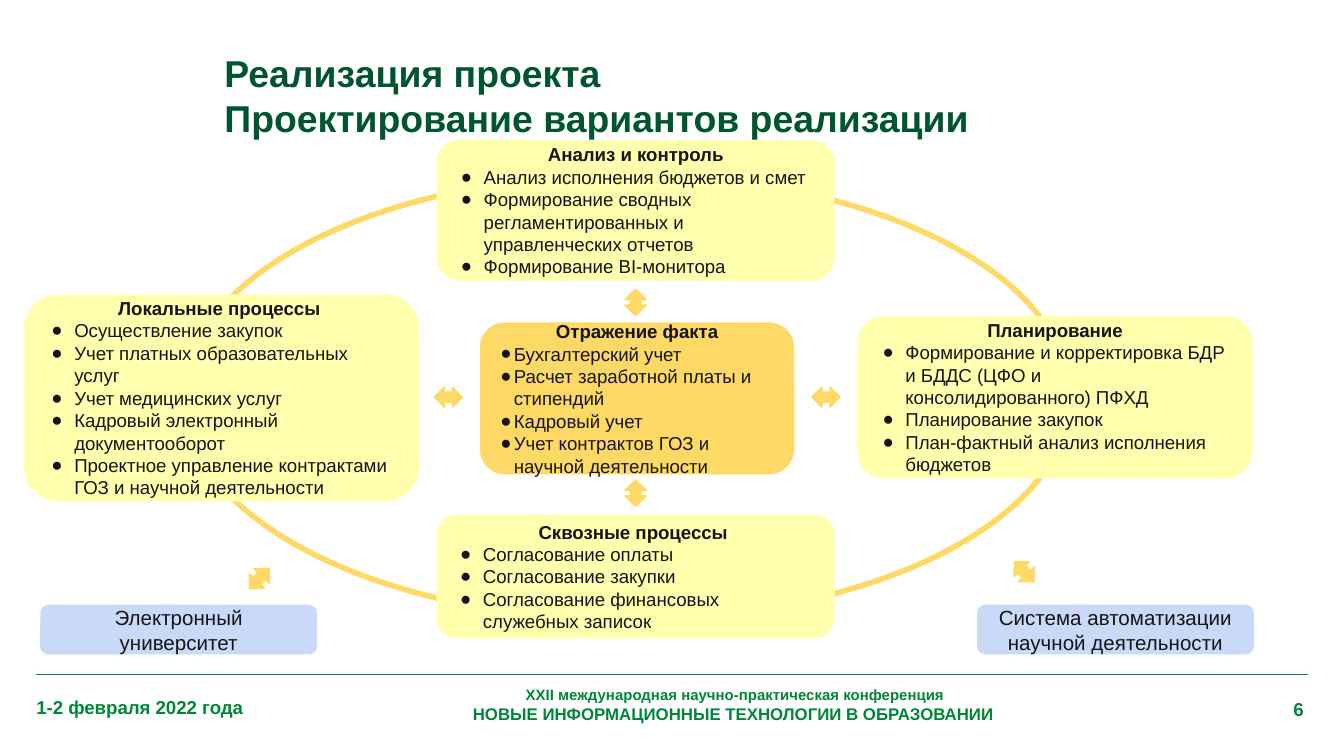
from lxml.etree import SubElement
from pptx import Presentation
from pptx.dml.color import RGBColor
from pptx.enum.shapes import MSO_CONNECTOR, MSO_SHAPE
from pptx.enum.text import MSO_ANCHOR, MSO_AUTO_SIZE, PP_ALIGN
from pptx.oxml.ns import qn
from pptx.util import Inches, Pt

FONT = "Arial"
GREEN = RGBColor(0x00, 0x86, 0x37)
DARK_GREEN = RGBColor(0x00, 0x55, 0x31)
INK = RGBColor(0x16, 0x14, 0x16)
GOLD = RGBColor(0xFF, 0xD9, 0x66)
PALE_YELLOW = RGBColor(0xFF, 0xFF, 0xAD)
PALE_BLUE = RGBColor(0xC9, 0xDA, 0xF8)

# Box (left, top, width, height), fill, bullet margin, heading, bullet items
PROCESSES = [
    ((3.57, 2.4, 2.34, 1.13), GOLD, 0.1, "Отражение факта", [
        "Бухгалтерский учет",
        "Расчет заработной платы и стипендий",
        "Кадровый учет",
        "Учет контрактов ГОЗ и научной деятельности"]),
    ((6.38, 2.35, 2.94, 1.21), PALE_YELLOW, 0.2, "Планирование", [
        "Формирование и корректировка БДР и БДДС (ЦФО и консолидированного) ПФХД",
        "Планирование закупок",
        "План-фактный анализ исполнения бюджетов"]),
    ((3.25, 1.04, 2.96, 1.05), PALE_YELLOW, 0.2, "Анализ и контроль", [
        "Анализ исполнения бюджетов и смет",
        "Формирование сводных регламентированных и управленческих отчетов",
        "Формирование BI-монитора"]),
    ((3.25, 3.83, 2.96, 0.92), PALE_YELLOW, 0.2, "Сквозные процессы ", [
        "Согласование оплаты",
        "Согласование закупки",
        "Согласование финансовых служебных записок"]),
    ((0.18, 2.19, 2.94, 1.54), PALE_YELLOW, 0.2, "Локальные процессы ", [
        "Осуществление закупок",
        "Учет платных образовательных услуг",
        "Учет медицинских услуг",
        "Кадровый электронный документооборот",
        "Проектное управление контрактами ГОЗ и научной деятельности"]),
]

SYSTEMS = [
    ((0.3, 4.5, 2.06, 0.37), "Электронный университет"),
    ((7.27, 4.5, 2.06, 0.37), "Система автоматизации научной деятельности"),
]

# Box and rotation in degrees
ARROWS = [
    ((4.65, 2.15, 0.16, 0.2), 0),
    ((6.07, 2.85, 0.15, 0.21), 90),
    ((3.26, 2.85, 0.15, 0.21), 90),
    ((4.65, 3.57, 0.16, 0.2), 0),
    ((7.54, 4.15, 0.16, 0.21), 316.5),
    ((1.85, 4.2, 0.16, 0.21), 43.5),
]


def inches(box):
    return [Inches(length) for length in box]


def write(para, text, size=10, color=INK, bold=False, align=PP_ALIGN.LEFT):
    para.alignment = align
    span = para.add_run()
    span.text = text
    span.font.name = FONT
    span.font.size = Pt(size)
    span.font.bold = bold
    span.font.color.rgb = color


def set_frame(frame, inset_x=0.0, inset_y=0.0, anchor=MSO_ANCHOR.MIDDLE):
    frame.word_wrap = True
    frame.auto_size = MSO_AUTO_SIZE.NONE
    frame.vertical_anchor = anchor
    frame.margin_left = frame.margin_right = Inches(inset_x)
    frame.margin_top = frame.margin_bottom = Inches(inset_y)


def add_bullet(para, margin):
    properties = para._p.get_or_add_pPr()
    properties.set("marL", str(Inches(margin)))
    properties.set("indent", str(Inches(-0.17)))
    color = SubElement(properties, qn("a:buClr"))
    SubElement(color, qn("a:srgbClr"), val=str(INK))
    SubElement(properties, qn("a:buFont"), typeface=FONT)
    SubElement(properties, qn("a:buChar"), char="●")


def add_figure(slide, kind, box, fill=None, line=None, width=0.75):
    figure = slide.shapes.add_shape(kind, *inches(box))
    figure.shadow.inherit = False
    if fill is None:
        figure.fill.background()
    else:
        figure.fill.solid()
        figure.fill.fore_color.rgb = fill
    if line is None:
        figure.line.fill.background()
    else:
        figure.line.color.rgb = line
        figure.line.width = Pt(width)
    return figure


def add_card(slide, box, fill):
    """Add a rounded box and return its text frame."""
    card = add_figure(slide, MSO_SHAPE.ROUNDED_RECTANGLE, box, fill)
    set_frame(card.text_frame, 0.1, 0.1)
    return card.text_frame


def add_process(slide, box, fill, margin, heading, items):
    frame = add_card(slide, box, fill)
    write(frame.paragraphs[0], heading, bold=True, align=PP_ALIGN.CENTER)
    for item in items:
        para = frame.add_paragraph()
        add_bullet(para, margin)
        write(para, item)


def add_system(slide, box, name):
    frame = add_card(slide, box, PALE_BLUE)
    write(frame.paragraphs[0], name, size=11, align=PP_ALIGN.CENTER)


def add_arrow(slide, box, rotation):
    arrow = add_figure(slide, MSO_SHAPE.UP_DOWN_ARROW, box, GOLD, GOLD)
    arrow.adjustments[0] = arrow.adjustments[1] = 0.5
    arrow.rotation = rotation


def add_title(slide, box, lines):
    title = slide.shapes.title
    title.left, title.top, title.width, title.height = inches(box)
    frame = title.text_frame
    set_frame(frame, 0.06)
    for number, line in enumerate(lines):
        para = frame.add_paragraph() if number else frame.paragraphs[0]
        write(para, line, size=20, color=DARK_GREEN, bold=True)


def add_footer(slide, box):
    left, top, width, _ = box

    def add_note(offset_x, offset_y, note_width, height, anchor=MSO_ANCHOR.TOP):
        note = slide.shapes.add_textbox(
            *inches((left + offset_x, top + offset_y, note_width, height)))
        set_frame(note.text_frame, anchor=anchor)
        return note.text_frame.paragraphs[0]

    rule = slide.shapes.add_connector(
        MSO_CONNECTOR.STRAIGHT, *inches((left, top, left + width, top)))
    rule.line.color.rgb = GREEN
    rule.line.width = Pt(0.75)
    SubElement(rule._element.spPr, qn("a:effectLst"))

    style = {"color": GREEN, "bold": True}
    write(add_note(0, 0.16, 1.89, 0.17, MSO_ANCHOR.MIDDLE),
          "1-2 февраля 2022 года", **style)
    conference = add_note(1.58, 0.08, 7.24, 0.29)
    write(conference, "XXII международная научно-практическая конференция",
          size=8, align=PP_ALIGN.CENTER, **style)
    conference.add_line_break()
    write(conference, "НОВЫЕ ИНФОРМАЦИОННЫЕ ТЕХНОЛОГИИ В ОБРАЗОВАНИИ ",
          size=9, align=PP_ALIGN.CENTER, **style)
    write(add_note(8.59, 0.17, 0.84, 0.17), "6", align=PP_ALIGN.RIGHT, **style)


def add_diagram(slide):
    add_figure(slide, MSO_SHAPE.OVAL, (1.37, 1.3, 6.59, 3.31), line=GOLD, width=3)
    for process in PROCESSES:
        add_process(slide, *process)
    for arrow in ARROWS:
        add_arrow(slide, *arrow)
    for system in SYSTEMS:
        add_system(slide, *system)


def main():
    deck = Presentation()
    deck.slide_width = Inches(10)
    deck.slide_height = deck.slide_width * 9 // 16
    slide = deck.slides.add_slide(deck.slide_layouts[5])
    add_title(slide, (1.61, 0.37, 7.88, 0.67),
              ["Реализация проекта", "Проектирование вариантов реализации"])
    add_footer(slide, (0.27, 5.02, 9.46, 0.61))
    add_diagram(slide)
    deck.save("out.pptx")


if __name__ == "__main__":
    main()
